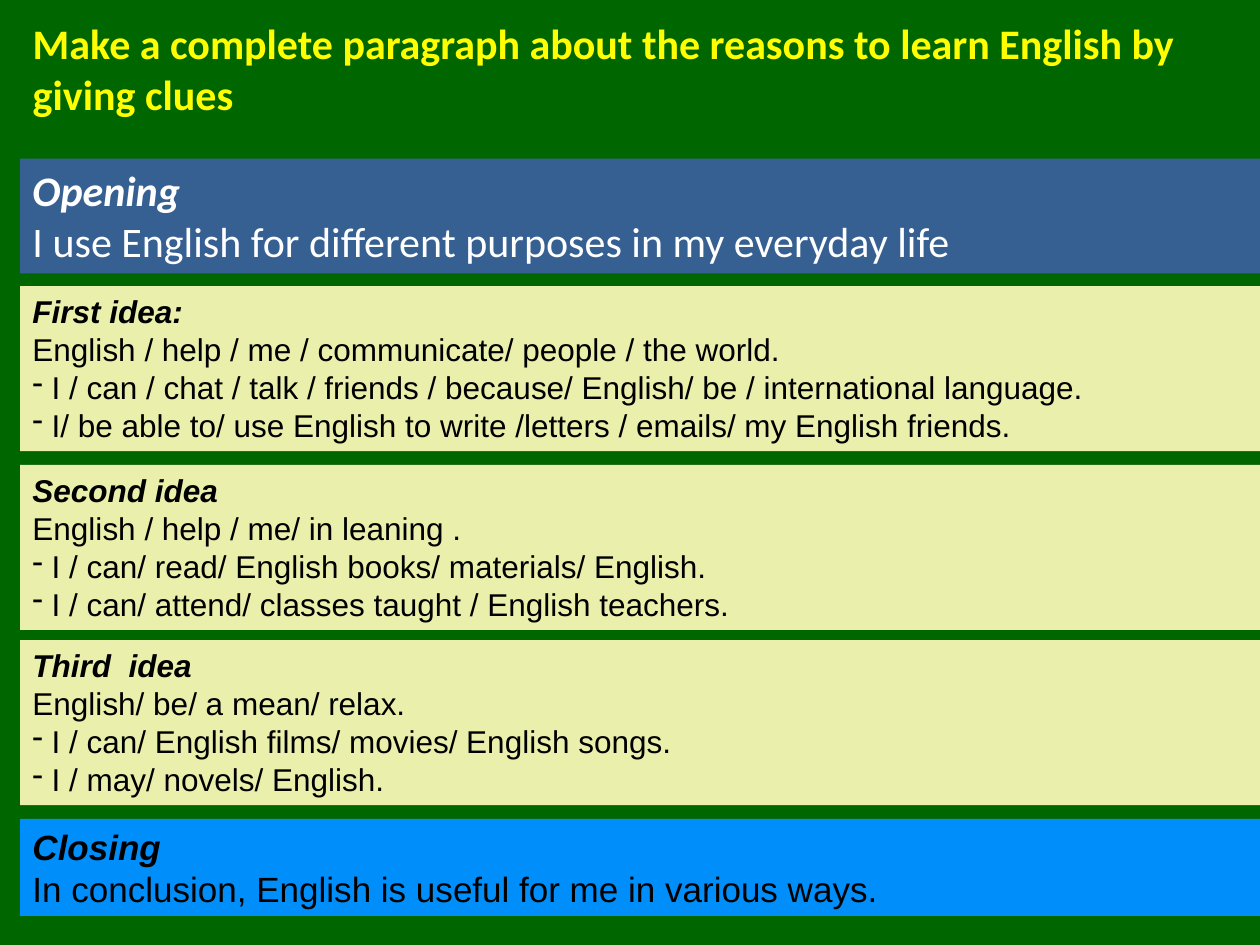
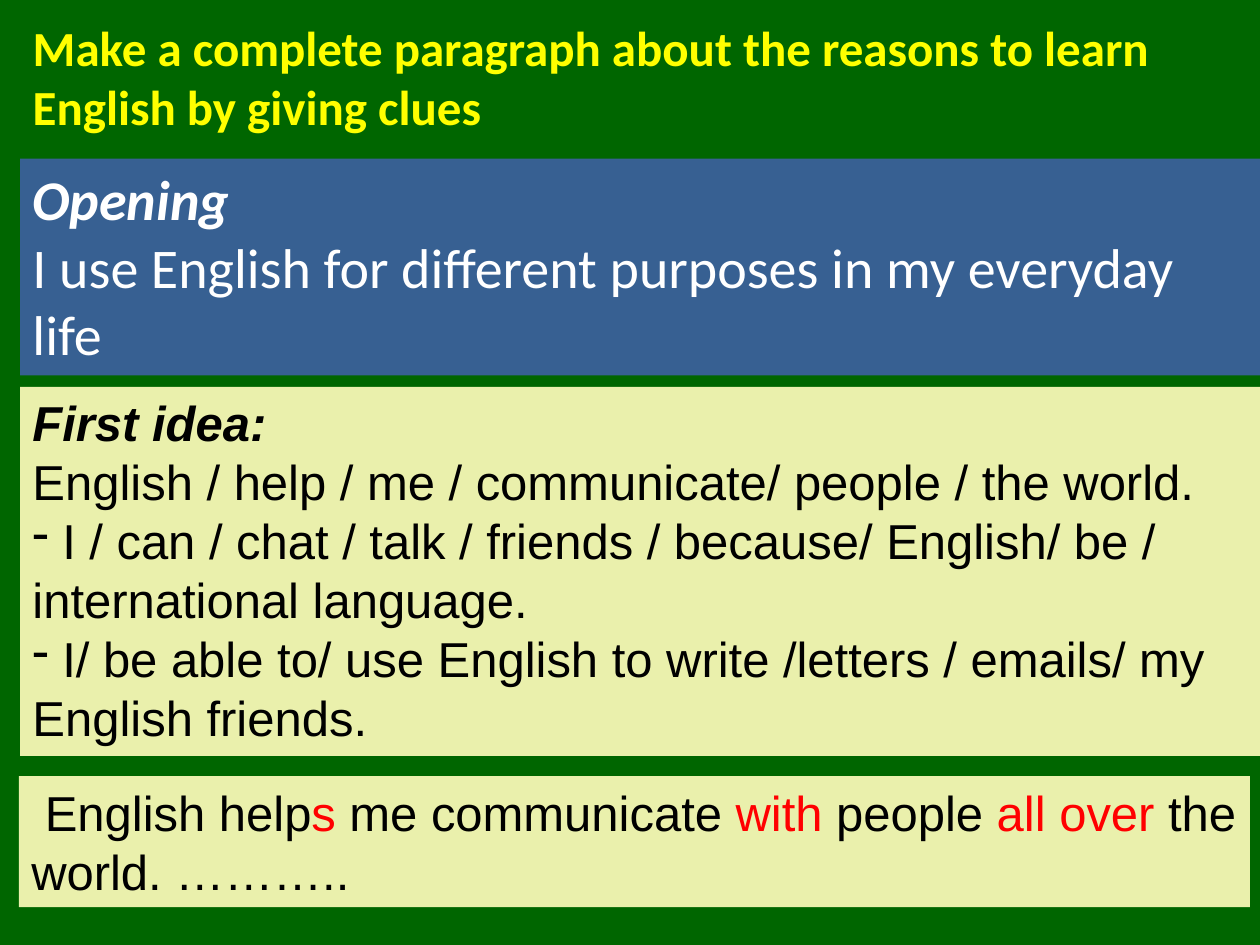
from lxml import etree
from pptx import Presentation
from pptx.dml.color import RGBColor
from pptx.enum.shapes import MSO_SHAPE as Shape
from pptx.enum.text import MSO_ANCHOR as Anchor, MSO_AUTO_SIZE as Fit, PP_ALIGN as Align
from pptx.oxml.ns import qn
from pptx.util import Inches, Pt

GREEN, YELLOW, NAVY, CREAM, SKY = "006600", "FFFF00", "376092", "EAF0AC", "008FFA"
WHITE, BLACK, RED = "FFFFFF", "000000", "FF0000"
LEFT, WIDTH = 0.16, 9.84

TITLE = "Make a complete paragraph about the reasons to learn English by giving clues"
OPENING = ["Opening", "I use English for different purposes in my everyday life"]
FIRST = ["First idea:", "English / help / me / communicate/ people / the world.",
         "- I / can / chat / talk / friends / because/ English/ be / international language.",
         "- I/ be able to/ use English to write /letters / emails/ my English friends."]
SECOND = ["Second idea", "English / help / me/ in leaning .",
          "- I / can/ read/ English books/ materials/ English.",
          "- I / can/ attend/ classes taught / English teachers."]
THIRD = ["Third  idea", "English/ be/ a mean/ relax.",
         "- I / can/ English films/ movies/ English songs.",
         "- I / may/ novels/ English."]
CLOSING = ["Closing", "In conclusion, English is useful for me in various ways."]
ANSWER = [" English help|s| me communicate |with| people |all over |the world. ……….."]

# Each slide: title height, title size, bands of (left, top, width, height), fill, font, size, ink, lines
SLIDES = [
    (0.91, 24, [
        ((LEFT, 1.26, WIDTH, 0.91), NAVY, "Calibri", 24, WHITE, OPENING),
        ((LEFT, 2.27, WIDTH, 1.31), CREAM, "Arial", 18, BLACK, FIRST),
        ((LEFT, 3.69, WIDTH, 1.31), CREAM, "Arial", 18, BLACK, SECOND),
        ((LEFT, 5.08, WIDTH, 1.31), CREAM, "Arial", 18, BLACK, THIRD),
        ((LEFT, 6.5, WIDTH, 0.77), SKY, "Arial", 20, BLACK, CLOSING),
    ]),
    (1.04, 28, [
        ((LEFT, 1.26, WIDTH, 1.72), NAVY, "Calibri", 32, WHITE, OPENING),
        ((LEFT, 3.07, WIDTH, 2.93), CREAM, "Arial", 28, BLACK, FIRST),
        ((0.15, 6.16, 9.77, 1.04), CREAM, "Arial", 28, BLACK, ANSWER),
    ]),
]


def paint(fill, color):
    fill.solid()
    fill.fore_color.rgb = RGBColor.from_string(color)


def write(frame, lines, font, size, ink, bold=False):
    """Fill a frame: the first of several lines is a heading, "-" starts a bullet, |..| is red."""
    for name, value in {"word_wrap": True, "auto_size": Fit.NONE,
                        "vertical_anchor": Anchor.TOP}.items():
        setattr(frame, name, value)
    for row, line in enumerate(lines):
        para = frame.paragraphs[0] if row == 0 else frame.add_paragraph()
        para.alignment = Align.LEFT
        if line.startswith("-"):
            etree.SubElement(para._p.get_or_add_pPr(), qn("a:buChar"), char="-")
            line = line[1:]
        head = row == 0 and len(lines) > 1
        look = {"name": font, "size": Pt(size), "bold": bold or head, "italic": head}
        for part, text in enumerate(line.split("|")):
            run = para.add_run()
            run.text = text
            for name, value in look.items():
                setattr(run.font, name, value)
            paint(run.font.fill, RED if part % 2 else ink)


deck = Presentation()
deck.slide_width, deck.slide_height = Inches(10), Inches(7.5)

for tall, size, bands in SLIDES:
    slide = deck.slides.add_slide(deck.slide_layouts[5])
    paint(slide.background.fill, GREEN)

    title = slide.shapes.title
    place = {"left": LEFT, "top": 0.09, "width": WIDTH, "height": tall}
    for name, value in place.items():
        setattr(title, name, Inches(value))
    write(title.text_frame, [TITLE], "Calibri", size, YELLOW, bold=True)

    for box, fill, font, size, ink, lines in bands:
        band = slide.shapes.add_shape(Shape.RECTANGLE, *map(Inches, box))
        band.shadow.inherit = False
        band.line.fill.background()
        paint(band.fill, fill)
        write(band.text_frame, lines, font, size, ink)

deck.save("out.pptx")
